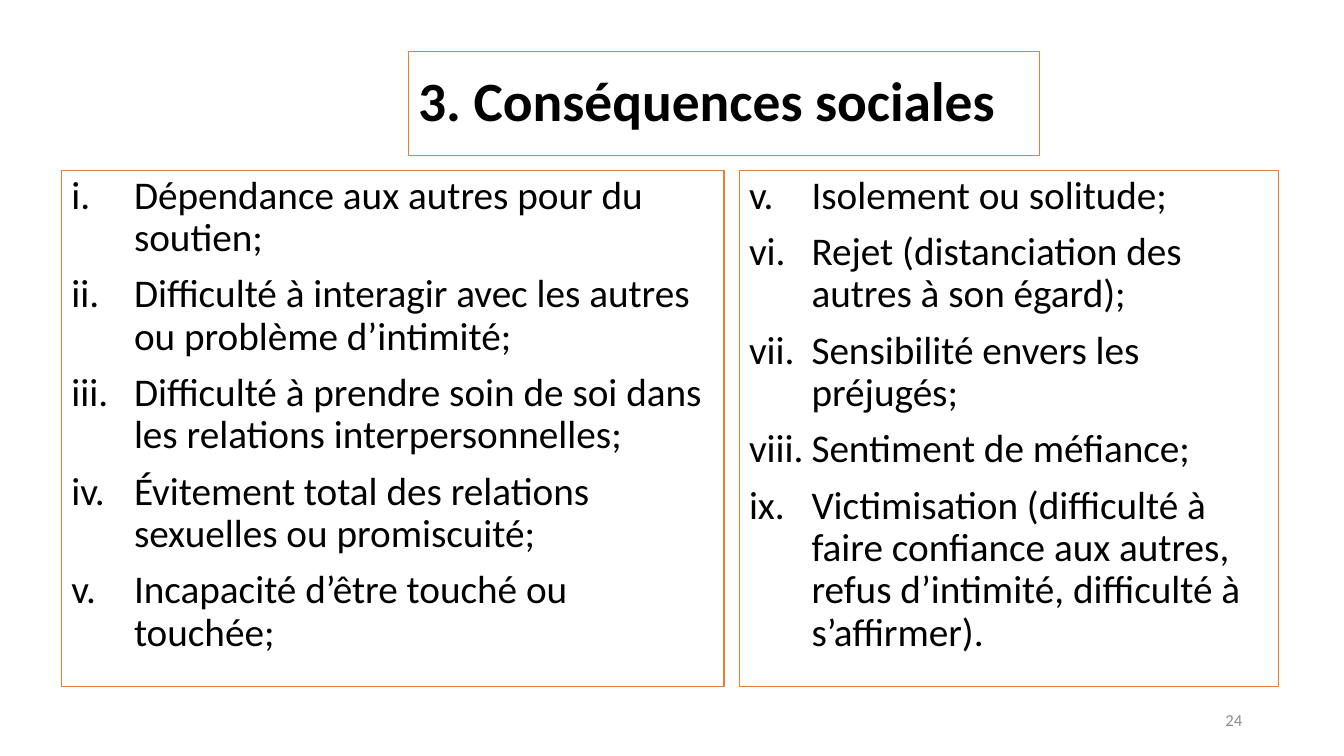
"""Build the slide on social consequences: a title over two numbered lists."""
from pptx import Presentation
from pptx.dml.color import RGBColor
from pptx.enum.shapes import MSO_SHAPE
from pptx.enum.text import MSO_ANCHOR, PP_ALIGN
from pptx.oxml.xmlchemy import OxmlElement
from pptx.util import Inches, Pt

THEME = {
    "font": "Calibri",
    "text": RGBColor(0, 0, 0),
    "muted": RGBColor(0x8C, 0x8C, 0x8C),
    "line": RGBColor(0xED, 0x7D, 0x31),
    "title": Pt(39.6),
    "body": Pt(28),
    "number": Pt(12),
}

prs = Presentation()
prs.slide_width, prs.slide_height = Inches(13.33), Inches(7.5)
COL, ROW = prs.slide_width / 100, prs.slide_height / 100
s = prs.slides.add_slide(prs.slide_layouts[6])


def add_box(x, y, w, h, lines, size, color="text", anchor=MSO_ANCHOR.MIDDLE,
            align=PP_ALIGN.LEFT, outlined=True):
    """Add a rectangle of text, placed in hundredths of the slide."""
    sp = s.shapes.add_shape(MSO_SHAPE.RECTANGLE, int(x * COL), int(y * ROW),
                            int(w * COL), int(h * ROW))
    sp.shadow.inherit = False
    sp.fill.background()
    if outlined:
        sp.line.color.rgb = THEME["line"]
        sp.line.width = Pt(0.75)
    else:
        sp.line.fill.background()
    tf = sp.text_frame
    tf.word_wrap = True
    tf.vertical_anchor = anchor
    tf.text = "\n".join(lines)
    for p in tf.paragraphs:
        p.alignment = align
        p.line_spacing = 0.9
        for r in p.runs:
            r.font.name = THEME["font"]
            r.font.size = THEME[size]
            r.font.color.rgb = THEME[color]
    return tf


tf = add_box(30.38, 6.8, 46.96, 13.73, ["3. Conséquences sociales"], "title")
tf.paragraphs[0].runs[0].font.bold = True

LISTS = [
    (49.29, 1, [
        "Dépendance aux autres pour du soutien;",
        "Difficulté à interagir avec les autres ou problème d’intimité;",
        "Difficulté à prendre soin de soi dans les relations interpersonnelles;",
        "Évitement total des relations sexuelles ou promiscuité;",
        "Incapacité d’être touché ou touchée;",
    ]),
    (40.14, 5, [
        "Isolement ou solitude;",
        "Rejet (distanciation des autres à son égard);",
        "Sensibilité envers les préjugés;",
        "Sentiment de méfiance;",
        "Victimisation (difficulté à faire confiance aux autres, "
        "refus d’intimité, difficulté à s’affirmer).",
    ]),
]
GAP = 1.12
INDENT = Inches(0.62)

x = 4.58
for width, start, items in LISTS:
    tf = add_box(x, 22.53, width, 68.27, items, "body", anchor=MSO_ANCHOR.TOP)
    for i, p in enumerate(tf.paragraphs):
        p.space_before = Pt(10 if i else 0)
        pPr = p._p.get_or_add_pPr()
        pPr.set("marL", str(INDENT))
        pPr.set("indent", str(-INDENT))
        numbering = OxmlElement("a:buAutoNum")
        numbering.set("type", "romanLcPeriod")
        numbering.set("startAt", str(start))
        pPr.append(numbering)
    x += width + GAP

add_box(70.67, 92.67, 22.51, 5.33, ["24"], "number", color="muted",
        align=PP_ALIGN.RIGHT, outlined=False)

prs.save("out.pptx")
